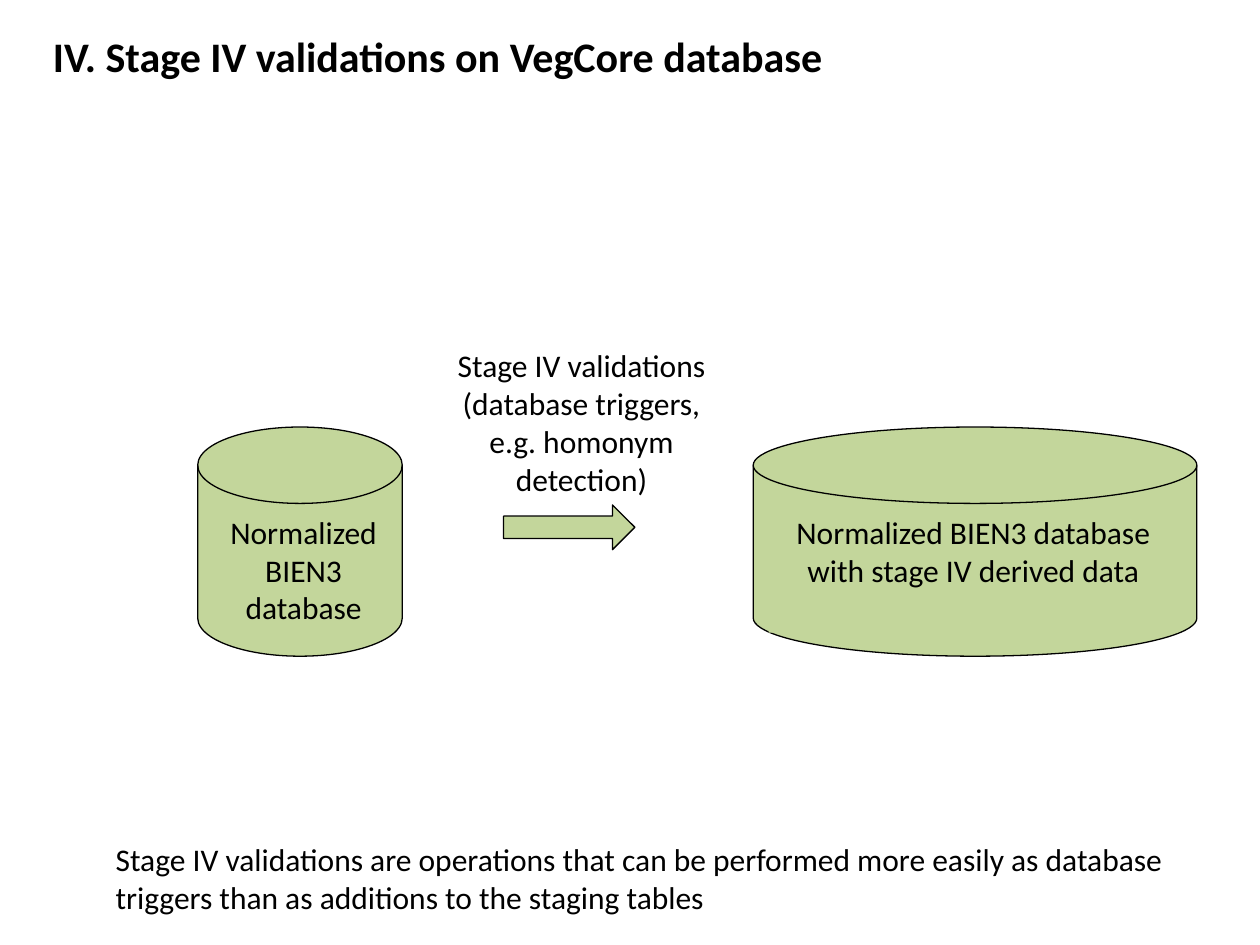
import pptx
import pptx.util
from pptx.dml.color import RGBColor
from pptx.enum.shapes import MSO_SHAPE
from pptx.enum.text import MSO_ANCHOR, MSO_AUTO_SIZE, PP_ALIGN

Pt = pptx.util.Pt
GREEN = RGBColor(0xC3, 0xD6, 0x9B)
BLACK = RGBColor(0, 0, 0)

# Content; boxes are (left, top, width, height) in points
TITLE = "IV. Stage IV validations on VegCore database"
TITLE_BOX = (23, 13.7, 658, 36)
DATABASES = [  # disk left and width, label left and width, label lines
    (113, 116.9, 122.4, 102.2, ["Normalized BIEN3 database"]),
    (430.4, 253.5, 439.2, 234,
     ["Normalized BIEN3 database", "with stage IV derived data"]),
]
DISK_TOP, DISK_HEIGHT = 244, 131
LABEL_TOP, LABEL_HEIGHT = 289.5, 72
ARROW_BOX = (287.8, 288.5, 75, 25.6)
STEP = ["Stage IV validations", "(database triggers,", "e.g. homonym detection)"]
STEP_BOX = (247.7, 194.4, 169.2, 50)
NOTE = ["Stage IV validations are operations that can be performed more easily "
        "as database triggers than as additions to the staging tables"]
NOTE_BOX = (59, 476.6, 646, 50)


def write(shape, lines, size=18, bold=False, align=PP_ALIGN.CENTER):
    frame = shape.text_frame
    frame.word_wrap = True
    frame.auto_size = MSO_AUTO_SIZE.NONE
    frame.vertical_anchor = MSO_ANCHOR.TOP
    for index, line in enumerate(lines):
        para = frame.paragraphs[0] if index == 0 else frame.add_paragraph()
        para.alignment = align
        span = para.add_run()
        span.text = line
        span.font.name = "Calibri"
        span.font.size = Pt(size)
        span.font.bold = bold
        span.font.color.rgb = BLACK


def add_green(page, kind, box, outlined=True):
    shape = page.shapes.add_shape(kind, *map(Pt, box))
    shape.shadow.inherit = False
    shape.fill.solid()
    shape.fill.fore_color.rgb = GREEN
    if outlined:
        shape.line.color.rgb = BLACK
        shape.line.width = Pt(0.75)
    else:
        shape.line.fill.background()
    return shape


def main():
    deck = pptx.Presentation()
    deck.slide_width, deck.slide_height = Pt(720), Pt(540)
    page = deck.slides.add_slide(deck.slide_layouts[5])

    # Title
    title = page.shapes.title
    title.left, title.top, title.width, title.height = map(Pt, TITLE_BOX)
    write(title, [TITLE], size=24, bold=True, align=PP_ALIGN.LEFT)

    # Databases with their labels
    for disk_left, disk_width, label_left, label_width, lines in DATABASES:
        add_green(page, MSO_SHAPE.FLOWCHART_MAGNETIC_DISK,
                  (disk_left, DISK_TOP, disk_width, DISK_HEIGHT))
        label = add_green(page, MSO_SHAPE.RECTANGLE,
                          (label_left, LABEL_TOP, label_width, LABEL_HEIGHT),
                          outlined=False)
        write(label, lines)

    # Validation step and closing note
    add_green(page, MSO_SHAPE.RIGHT_ARROW, ARROW_BOX)
    for box, lines, align in [(STEP_BOX, STEP, PP_ALIGN.CENTER),
                              (NOTE_BOX, NOTE, PP_ALIGN.LEFT)]:
        write(page.shapes.add_textbox(*map(Pt, box)), lines, align=align)

    deck.save("out.pptx")


if __name__ == "__main__":
    main()
